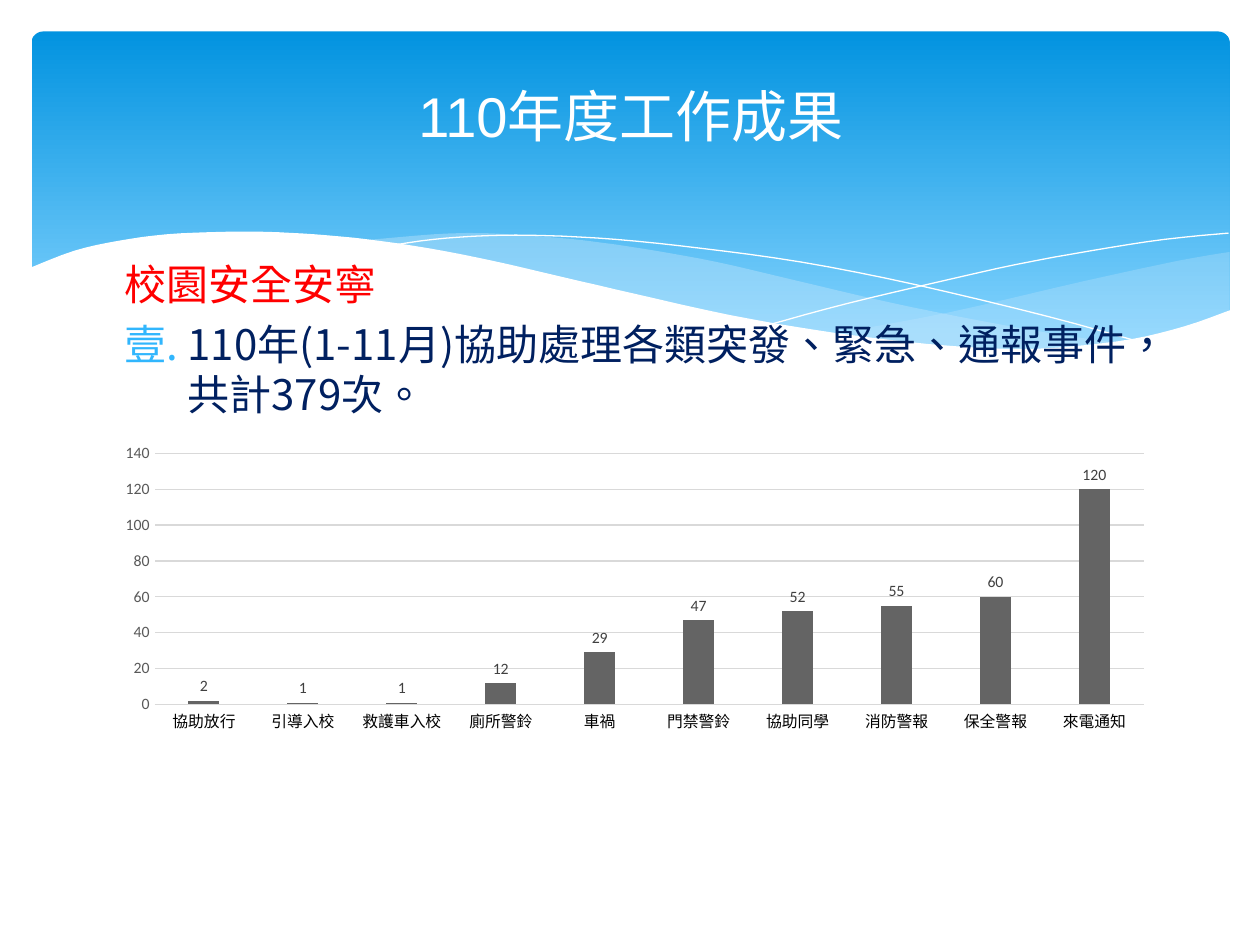
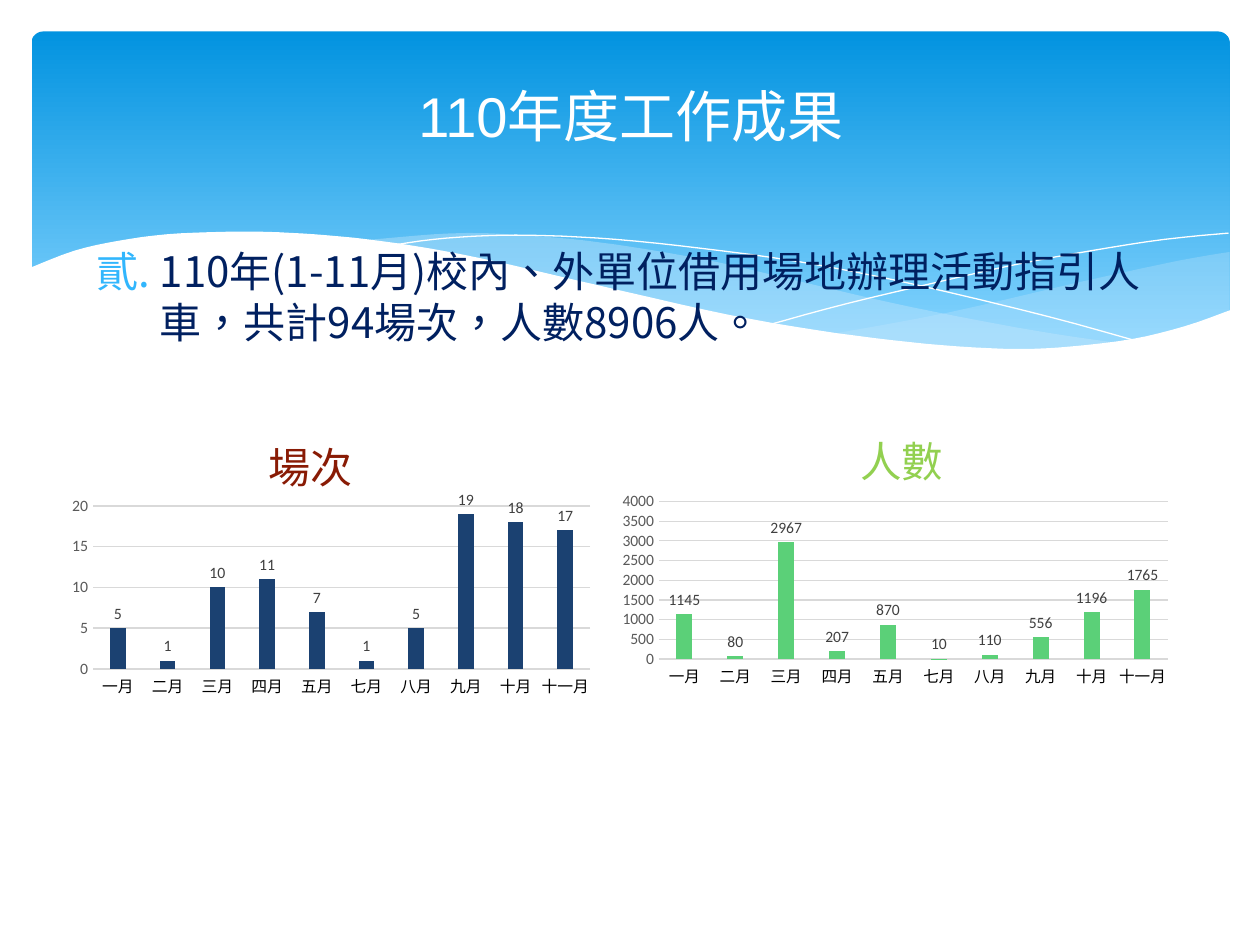
from lxml import etree
from pptx import Presentation
from pptx import util as u
from pptx.chart.data import CategoryChartData
from pptx.dml.color import RGBColor
from pptx.enum import chart as charts, shapes, text
from pptx.oxml import ns

COLORS = {
    "white": "FFFFFF", "band top": "0293E0", "band bottom": "83D3FE", "wave": "C6E7FC",
    "heading": "FF0000", "body": "002060", "number": "31B6FD",
    "grid": "D9D9D9", "scale": "595959", "label": "404040", "black": "000000",
    "events": "646464", "sessions": "1B4171", "sessions title": "891B05",
    "people": "5BD078", "people title": "92D050",
}
LATIN, CJK = "Calibri", "Noto Sans CJK SC"
BODY_SIZE = 24
LINE_PITCH = 29
FIRST_LINE_PITCH = 57
UNITS_PER_INCH = 1000

# Each outline is a list of curves; each curve is a list of points it passes through.
RIGHT_WAVE = [
    [(9.76, 2), (9.35, 2.07), (8.61, 2.23), (7.53, 2.48), (6.61, 2.65)],
    [(6.61, 2.65), (7.19, 2.72), (7.69, 2.77), (8.14, 2.78), (8.63, 2.75),
     (9.05, 2.69), (9.42, 2.59), (9.76, 2.47)],
]
MIDDLE_WAVE = [
    [(8.93, 2.73), (8.37, 2.65), (7.75, 2.54), (7.06, 2.4), (6.29, 2.22), (5.69, 2.08),
     (5.14, 1.98), (4.65, 1.91), (4.2, 1.87), (3.8, 1.85), (3.44, 1.86), (2.86, 1.91)],
    [(2.86, 1.91), (3.42, 1.99), (4.04, 2.11), (4.91, 2.32), (5.66, 2.48), (6.34, 2.61),
     (6.95, 2.7), (7.48, 2.76), (7.96, 2.78), (8.48, 2.77), (8.93, 2.73)],
]
FALLING_LINE = [
    [(3.09, 1.95), (3.44, 1.9), (3.87, 1.87), (4.33, 1.87), (4.89, 1.9), (5.56, 1.97),
     (6.36, 2.08), (7.27, 2.26), (8.31, 2.51), (9.07, 2.72)],
]
RISING_LINE = [
    [(6.13, 2.57), (6.72, 2.41), (7.48, 2.23), (8.06, 2.1), (8.66, 1.99),
     (9.24, 1.9), (9.75, 1.85)],
]
WHITE_WAVE = [
    [(9.77, 2.46), (9.4, 2.59), (8.99, 2.69), (8.5, 2.75), (8.09, 2.77), (7.61, 2.75),
     (7.08, 2.7), (6.48, 2.62), (5.79, 2.5), (5.03, 2.33), (4.47, 2.2), (3.91, 2.07),
     (3.4, 1.97), (2.92, 1.9), (2.5, 1.86), (2.11, 1.84), (1.77, 1.84), (1.32, 1.86),
     (0.95, 1.91), (0.59, 1.99), (0.23, 2.13)],
    [(0.23, 3.29)],
    [(9.77, 3.29)],
]

EVENTS = {"協助放行": 2, "引導入校": 1, "救護車入校": 1, "廁所警鈴": 12, "車禍": 29,
          "門禁警鈴": 47, "協助同學": 52, "消防警報": 55, "保全警報": 60, "來電通知": 120}
MONTHS = ["一月", "二月", "三月", "四月", "五月", "七月", "八月", "九月", "十月", "十一月"]
SESSIONS = dict(zip(MONTHS, [5, 1, 10, 11, 7, 1, 5, 19, 18, 17]))
PEOPLE = dict(zip(MONTHS, [1145, 80, 2967, 207, 870, 10, 110, 556, 1196, 1765]))
HALF_PLOT = (0.053, 0.27, 0.911, 0.331)


def color(name):
    return RGBColor.from_string(COLORS[name])


def smooth(knots, steps=4):
    """Return points on a Catmull-Rom curve through the knots."""
    padded = [knots[0], *knots, knots[-1]]
    points = [knots[0]]
    for a, b, c, d in zip(padded, padded[1:], padded[2:], padded[3:]):
        for step in range(1, steps + 1):
            t = step / steps
            points.append(tuple(
                (2 * q + (r - p) * t + (2 * p - 5 * q + 4 * r - s) * t ** 2
                 + (3 * q - p - 3 * r + s) * t ** 3) / 2
                for p, q, r, s in zip(a, b, c, d)))
    return points


def add_xml(parent, tag, **attributes):
    return etree.SubElement(parent, ns.qn(tag), attributes)


def set_font(font, size, color_name, name=None):
    font.size = u.Pt(size)
    font.color.rgb = color(color_name)
    if name:
        font.name = name


def place_inside(element, index, **position):
    """Give a chart part a manual layout in fractions of the chart."""
    for old in element.findall(ns.qn("c:layout")):
        element.remove(old)
    layout = etree.Element(ns.qn("c:layout"))
    element.insert(index, layout)
    manual = add_xml(layout, "c:manualLayout")
    if "w" in position:
        add_xml(manual, "c:layoutTarget", val="inner")
    for axis in "xy":
        add_xml(manual, f"c:{axis}Mode", val="edge")
    for key, value in position.items():
        add_xml(manual, f"c:{key}", val=str(value))


class SlideWriter:
    """Holds the deck, its shared style and the current slide."""

    def __init__(self):
        self.deck = Presentation()
        self.deck.slide_width, self.deck.slide_height = u.Inches(10), u.Inches(7.5)
        self.page = None

    def new_page(self):
        self.page = self.deck.slides.add_slide(self.deck.slide_layouts[6])
        self.band()
        self.curve(RIGHT_WAVE, "wave", 29)
        self.curve(MIDDLE_WAVE, "wave", 40)
        self.curve(FALLING_LINE)
        self.curve(RISING_LINE)
        self.curve(WHITE_WAVE, "white")
        self.title()

    def band(self):
        band = self.page.shapes.add_shape(
            shapes.MSO_SHAPE.ROUNDED_RECTANGLE, *map(u.Inches, (0.25, 0.25, 9.51, 2.7)))
        band.adjustments[0] = 0.034
        band.shadow.inherit = False
        band.line.fill.background()
        band.fill.gradient()
        band.fill.gradient_angle = 270
        for stop, name, position in zip(band.fill.gradient_stops,
                                        ("band top", "band bottom"), (0, 0.9)):
            stop.color.rgb = color(name)
            stop.position = position

    def curve(self, outline, fill=None, opacity=100):
        """Draw a filled outline, or a white hairline when no fill is given."""
        points = [(x * UNITS_PER_INCH, y * UNITS_PER_INCH)
                  for knots in outline for x, y in smooth(knots)]
        builder = self.page.shapes.build_freeform(
            *points[0], scale=u.Inches(1) / UNITS_PER_INCH)
        builder.add_line_segments(points[1:], close=fill is not None)
        shape = builder.convert_to_shape()
        shape.shadow.inherit = False
        if fill is None:
            shape.fill.background()
            shape.line.color.rgb = color("white")
            shape.line.width = u.Pt(0)
            return
        shape.line.fill.background()
        shape.fill.solid()
        shape.fill.fore_color.rgb = color(fill)
        if opacity < 100:
            rgb = shape.fill._xPr.find(".//" + ns.qn("a:srgbClr"))
            add_xml(rgb, "a:alpha", val=str(opacity * 1000))

    def text_box(self, *place):
        frame = self.page.shapes.add_textbox(*map(u.Inches, place)).text_frame
        frame.word_wrap = True
        frame.vertical_anchor = text.MSO_ANCHOR.MIDDLE
        return frame

    def span(self, para, words, font_name):
        span = para.add_run()
        span.text = words
        span.font.name = font_name
        properties = span._r.get_or_add_rPr()
        properties.set("lang", "zh-TW")
        add_xml(properties, "a:ea", typeface=CJK)

    def title(self):
        para = self.text_box(0.51, 0.44, 9, 0.94).paragraphs[0]
        para.alignment = text.PP_ALIGN.CENTER
        set_font(para.font, 32, "white")
        self.span(para, "110", "Arial")
        self.span(para, "年度工作成果", LATIN)

    def heading(self, para, words):
        para.line_spacing = u.Pt(FIRST_LINE_PITCH)
        set_font(para.font, BODY_SIZE, "heading")
        self.span(para, words, CJK)

    def numbered(self, para, words, number):
        properties = para._p.get_or_add_pPr()
        properties.set("marL", str(u.Inches(0.5)))
        properties.set("indent", str(u.Inches(-0.5)))
        add_xml(add_xml(properties, "a:buClr"), "a:srgbClr", val=COLORS["number"])
        add_xml(properties, "a:buAutoNum", type="ea1ChtPeriod", startAt=str(number))
        para.line_spacing = u.Pt(LINE_PITCH)
        para.space_before = u.Pt(BODY_SIZE * 0.2)
        set_font(para.font, BODY_SIZE, "body")
        self.span(para, words, CJK)

    def column_chart(self, place, values, fill, plot_place, top, unit):
        data = CategoryChartData()
        data.categories = list(values)
        data.add_series("Series 1", list(values.values()))
        chart = self.page.shapes.add_chart(
            charts.XL_CHART_TYPE.COLUMN_CLUSTERED, *map(u.Inches, place), data).chart
        chart.has_legend = chart.has_title = False
        set_font(chart.font, 10, "black", LATIN)
        place_inside(chart._chartSpace.chart.plotArea, 0, **dict(zip("xywh", plot_place)))

        plot = chart.plots[0]
        plot.gap_width, plot.overlap = 219, -27
        plot.vary_by_categories = False
        bars = plot.series[0].format.fill
        bars.solid()
        bars.fore_color.rgb = color(fill)
        plot.has_data_labels = True
        labels = plot.data_labels
        labels.show_value = True
        labels.position = charts.XL_LABEL_POSITION.OUTSIDE_END
        set_font(labels.font, 9, "label", LATIN)

        names, scale = chart.category_axis, chart.value_axis
        for axis in (names, scale):
            axis.major_tick_mark = axis.minor_tick_mark = charts.XL_TICK_MARK.NONE
        set_font(names.tick_labels.font, 9, "black", CJK)
        set_font(scale.tick_labels.font, 9, "scale", LATIN)
        scale.minimum_scale, scale.maximum_scale, scale.major_unit = 0, top, unit
        scale.format.line.fill.background()
        for line in (names.format.line, scale.major_gridlines.format.line):
            line.color.rgb = color("grid")
            line.width = u.Pt(0.75)
        return chart

    def chart_title(self, chart, words, color_name, x, y):
        title = chart.chart_title
        title.text_frame.text = words
        set_font(title.text_frame.paragraphs[0].font, BODY_SIZE, color_name, CJK)
        title.text_frame.paragraphs[0].font.bold = False
        place_inside(title._element, 1, x=x, y=y)


def main():
    writer = SlideWriter()

    writer.new_page()
    body = writer.text_box(0.89, 1.47, 8.66, 2.05)
    writer.heading(body.paragraphs[0], "校園安全安寧")
    writer.numbered(body.add_paragraph(),
                    "110年(1-11月)協助處理各類突發、緊急、通報事件，共計379次。", 1)
    writer.column_chart((0.89, 3.51, 8.62, 3.39), EVENTS, "events",
                        (0.039, 0.026, 0.911, 0.588), 140, 20)

    writer.new_page()
    body = writer.text_box(0.67, 0.99, 8.79, 2.72)
    writer.numbered(body.paragraphs[0],
                    "110年(1-11月)校內、外單位借用場地辦理活動指引人車，共計94場次，人數8906人。", 2)
    sessions = writer.column_chart((0.51, 2.96, 4.33, 3.91), SESSIONS, "sessions",
                                   HALF_PLOT, 20, 5)
    writer.chart_title(sessions, "場次", "sessions title", 0.36, 0.1)
    people = writer.column_chart((4.94, 2.96, 4.49, 3.78), PEOPLE, "people",
                                 HALF_PLOT, 4000, 500)
    writer.chart_title(people, "人數", "people title", 0.4, 0.09)

    writer.deck.save("out.pptx")


if __name__ == "__main__":
    main()
